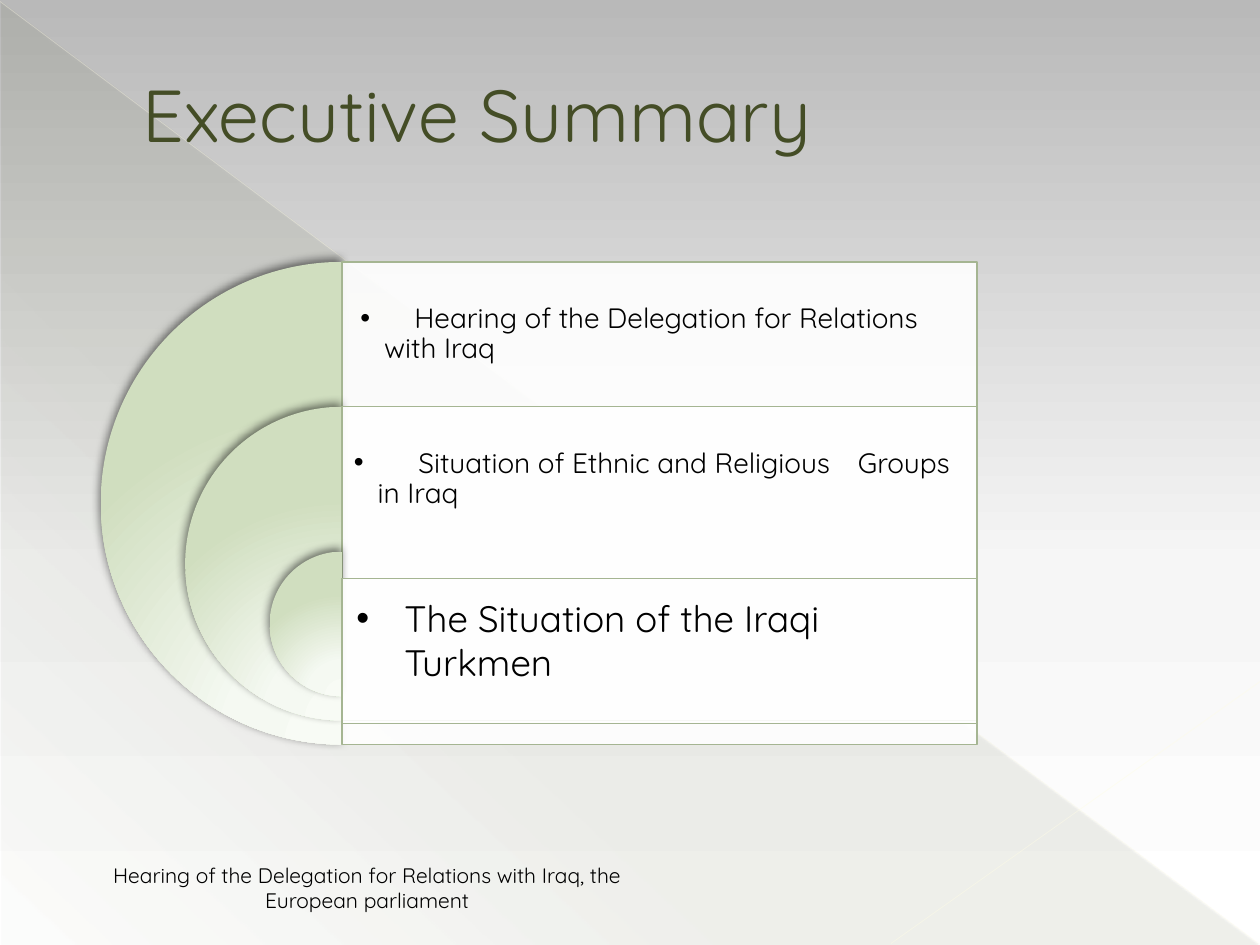
import pptx
import pptx.dml.color
import pptx.enum.shapes
import pptx.enum.text
import pptx.oxml
import pptx.oxml.ns
import pptx.util

Cm = pptx.util.Cm
Pt = pptx.util.Pt
SHAPES = pptx.enum.shapes.MSO_SHAPE
ANCHOR = pptx.enum.text.MSO_ANCHOR
ALIGN = pptx.enum.text.PP_ALIGN
NAMESPACE = pptx.oxml.ns.nsdecls("a")

FONT = "Quicksand"
OLIVE = "444D26"
BLACK = "000000"
WHITE = "FFFFFF"
GREEN = "A5B592"


def colour(value):
    return pptx.dml.color.RGBColor.from_string(value)


def element(xml):
    """Parse one DrawingML element whose root lacks its namespace."""
    tag, rest = xml.split(">", 1)
    return pptx.oxml.parse_xml(f"{tag} {NAMESPACE}>{rest}")


def colour_xml(value, alpha=100):
    return f'<a:srgbClr val="{value}"><a:alpha val="{alpha * 1000}"/></a:srgbClr>'


def set_gradient(fill, properties, stops, direction):
    """Fill with (position, colour, opacity) stops along the given direction."""
    fill.solid()
    solid = properties.find(pptx.oxml.ns.qn("a:solidFill"))
    stop_xml = "".join(
        f'<a:gs pos="{position * 1000}">{colour_xml(value, alpha)}</a:gs>'
        for position, value, alpha in stops
    )
    gradient = element(f"<a:gradFill><a:gsLst>{stop_xml}</a:gsLst>{direction}</a:gradFill>")
    properties.replace(solid, gradient)


def linear(angle):
    return f'<a:lin ang="{angle * 60000}" scaled="0"/>'


def set_opacity(properties, value, alpha):
    solid = properties.find(pptx.oxml.ns.qn("a:solidFill"))
    properties.replace(solid, element(f"<a:solidFill>{colour_xml(value, alpha)}</a:solidFill>"))


def add_shape(page, kind, left, top, width, height):
    shape = page.shapes.add_shape(kind, Cm(left), Cm(top), Cm(width), Cm(height))
    shape.shadow.inherit = False
    shape.line.fill.background()
    return shape


def add_hairline(page, start, end, value, width, alpha):
    line = page.shapes.add_connector(
        pptx.enum.shapes.MSO_CONNECTOR.STRAIGHT, *map(Cm, start + end)
    )
    line.line.color.rgb = colour(value)
    line.line.width = Pt(width)
    properties = line._element.spPr
    set_opacity(properties.find(pptx.oxml.ns.qn("a:ln")), value, alpha)
    properties.append(element("<a:effectLst></a:effectLst>"))


def add_text(page, box, text, size, value=BLACK, anchor=ANCHOR.MIDDLE, inset=None):
    """Place one paragraph in the box (left, top, width, height) and return it."""
    frame = page.shapes.add_textbox(*map(Cm, box)).text_frame
    frame.word_wrap = True
    frame.vertical_anchor = anchor
    if inset is not None:
        frame.margin_left = frame.margin_right = Cm(inset)
        frame.margin_top = frame.margin_bottom = Cm(inset)
    para = frame.paragraphs[0]
    para.text = text
    para.font.name = FONT
    para.font.size = Pt(size)
    para.font.color.rgb = colour(value)
    return para


def set_bullet(para, indent, tab=None):
    properties = para._p.get_or_add_pPr()
    properties.set("marL", str(Cm(indent)))
    properties.set("indent", str(-Cm(indent)))
    parts = ['<a:buFont typeface="Arial"></a:buFont>', '<a:buChar char="•"></a:buChar>']
    if tab is not None:
        parts.append(f'<a:tabLst><a:tab pos="{Cm(tab)}" algn="l"/></a:tabLst>')
    default_run = properties.find(pptx.oxml.ns.qn("a:defRPr"))
    for part in parts:
        default_run.addprevious(element(part))


def draw_backdrop(page, width, height):
    """Grey gradient, faint triangle and two light diagonals."""
    background = page.background.fill
    background.solid()
    set_gradient(
        background, page._element.cSld.bg.bgPr,
        [(0, "B9B9B9", 100), (60, "F6F6F6", 100), (100, WHITE, 100)], linear(90),
    )
    triangle = add_shape(page, SHAPES.RIGHT_TRIANGLE, 0.03, 0.05, width - 0.05, height - 0.05)
    set_gradient(
        triangle.fill, triangle._element.spPr,
        [(0, OLIVE, 10), (70, OLIVE, 8), (100, OLIVE, 1)], linear(133),
    )
    add_hairline(page, (0, 0.03), (width - 0.03, height - 0.03), "FFFDE3", 0.39, 35)
    add_hairline(page, (width, 13.74), (17.96, height - 0.03), "FFFDE6", 0.47, 45)


def draw_half_disc(page, centre, top, size):
    disc = add_shape(page, SHAPES.PIE, centre - size / 2, top, size, size)
    # Angles of 90 and 270 degrees, in the units of the adjustments
    disc.adjustments[0] = 54
    disc.adjustments[1] = 162
    glow = (
        '<a:path path="circle">'
        '<a:fillToRect l="50000" t="155000" r="50000" b="-55000"/></a:path>'
    )
    properties = disc._element.spPr
    set_gradient(
        disc.fill, properties,
        [(0, "F8FBF5", 100), (34, "F5F9F2", 100), (100, "D0DEBF", 100)], glow,
    )
    properties.find(pptx.oxml.ns.qn("a:effectLst")).append(element(
        f'<a:outerShdw><a:dummy/></a:outerShdw>'.replace("<a:dummy/>", colour_xml(BLACK, 50))
    ))
    shadow = properties.find(".//" + pptx.oxml.ns.qn("a:outerShdw"))
    for name, amount in (("blurRad", Pt(5)), ("dist", Pt(2)), ("dir", 245 * 60000)):
        shadow.set(name, str(amount))
    shadow.set("rotWithShape", "0")


def draw_panel(page, left, top, width, height):
    panel = add_shape(page, SHAPES.RECTANGLE, left, top, width, height)
    panel.fill.solid()
    panel.fill.fore_color.rgb = colour(WHITE)
    set_opacity(panel._element.spPr, WHITE, 90)
    panel.line.color.rgb = colour(GREEN)
    panel.line.width = Pt(0.75)


def draw_summary(page, left, top, size, panel_width):
    """Nested half discs, each with a panel to its right, and the three points."""
    centre = left + size / 2
    row = size * 0.3
    for level, panel_drop in enumerate((0, 0, 0.55)):
        disc_top = top + level * row
        disc_size = size * (1 - 0.35 * level)
        draw_half_disc(page, centre, disc_top, disc_size)
        draw_panel(page, centre, disc_top + panel_drop, panel_width, disc_size)

    points = [
        ("\tHearing of the Delegation for Relations \twith Iraq", 0.19, 12.55, 1.09),
        ("\tSituation of Ethnic and Religious \tGroups in Iraq", 0.06, 12.73, 1.3),
    ]
    for index, (text, offset, width, tab) in enumerate(points):
        box = (centre + offset, top + index * row, width, row)
        para = add_text(page, box, text, 16, inset=0.18)
        para.line_spacing = 0.9
        set_bullet(para, 0.48, tab)

    box = (centre + 0.09, top + 6.15, 12.7, row)
    set_bullet(add_text(page, box, "The Situation of the Iraqi Turkmen", 21, inset=0.2), 0.97)


def draw_title(page, left, top, width, height):
    para = add_text(page, (left, top, width, height), "Executive Summary", 42, OLIVE)
    para._p.get_or_add_pPr().set("marL", str(Cm(1.35)))


def draw_footer(page, left, top, width, height):
    text = "Hearing of the Delegation for Relations with Iraq, the European parliament"
    para = add_text(page, (left, top, width, height), text, 12, anchor=ANCHOR.BOTTOM)
    para.alignment = ALIGN.CENTER


def main():
    deck = pptx.Presentation()
    deck.slide_width, deck.slide_height = Cm(25.4), Cm(19.05)
    page = deck.slides.add_slide(deck.slide_layouts[6])
    draw_backdrop(page, 25.4, 19.05)
    draw_summary(page, 2.03, 5.28, 9.73, 12.8)
    draw_title(page, 1.27, 0.74, 22.86, 3.07)
    draw_footer(page, 1.27, 17.15, 12.27, 1.37)
    deck.save("out.pptx")


if __name__ == "__main__":
    main()
